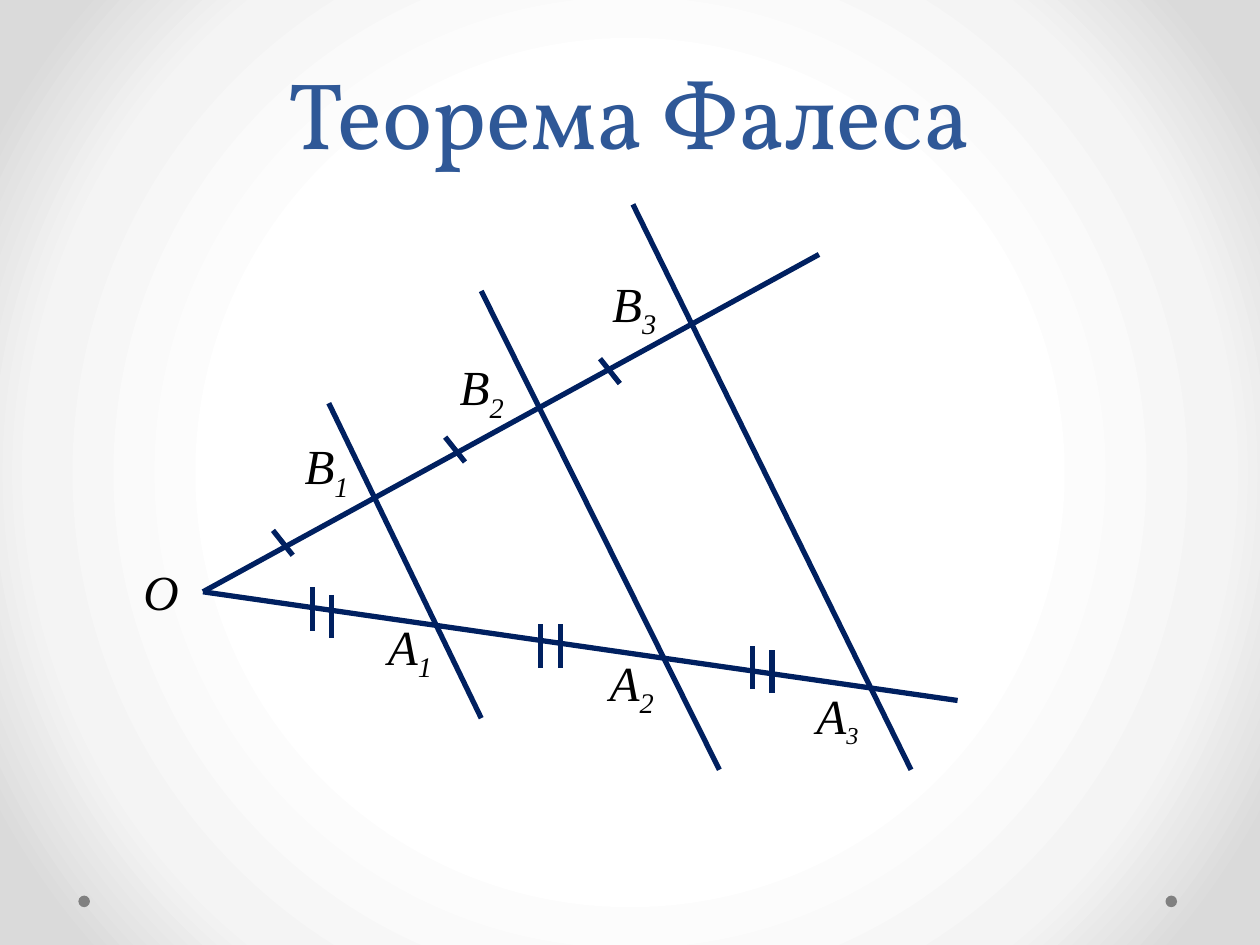
import dataclasses

import lxml.etree
import pptx
import pptx.dml.color
import pptx.enum.shapes
import pptx.enum.text
import pptx.oxml
import pptx.oxml.ns
import pptx.util

Pt = pptx.util.Pt
RGB = pptx.dml.color.RGBColor.from_string
ALIGN = pptx.enum.text.PP_ALIGN
ANCHOR = pptx.enum.text.MSO_ANCHOR
AUTO_SIZE = pptx.enum.text.MSO_AUTO_SIZE
SHAPE = pptx.enum.shapes.MSO_SHAPE
CONNECTOR = pptx.enum.shapes.MSO_CONNECTOR
qn = pptx.oxml.ns.qn


@dataclasses.dataclass(frozen=True)
class Theme:
    title_color: str = "2F5897"
    line_color: str = "002060"
    label_color: str = "000000"
    dot_color: str = "808080"
    background: tuple = ((50, "FFFFFF"), (76, "F4F4F4"), (92, "DADADA"))
    title_font: str = "Vollkorn"
    label_font: str = "Times New Roman"
    title_size: float = 54
    title_spacing: float = 58
    label_size: float = 28
    small_index_size: float = 24
    line_width: float = 3


def add_run(p, text, *, font, size, color, italic=False, subscript=False):
    r = p.add_run()
    r.text = text
    r.font.name = font
    r.font.size = Pt(size)
    r.font.italic = italic
    r.font.color.rgb = RGB(color)
    if subscript:
        r._r.get_or_add_rPr().set("baseline", "-25000")
    return r


class Diagram:
    def __init__(self, s, theme):
        self.s = s
        self.theme = theme

    def background(self):
        """Fill the slide with a circular gradient that starts at its centre."""
        fill = self.s.background.fill
        fill.solid()
        bg_pr = self.s._element.find(".//" + qn("p:bgPr"))
        stops = "".join(
            f'<a:gs pos="{pos * 1000}"><a:srgbClr val="{color}"/></a:gs>'
            for pos, color in self.theme.background
        )
        gradient = pptx.oxml.parse_xml(
            f'<a:gradFill {pptx.oxml.ns.nsdecls("a")} rotWithShape="1">'
            f"<a:gsLst>{stops}</a:gsLst>"
            '<a:path path="circle">'
            '<a:fillToRect l="50000" t="50000" r="50000" b="50000"/>'
            "</a:path></a:gradFill>"
        )
        bg_pr.replace(bg_pr.find(qn("a:solidFill")), gradient)

    def title(self, text, x, y, w, h):
        t = self.theme
        tf = self.s.shapes.add_textbox(Pt(x), Pt(y), Pt(w), Pt(h)).text_frame
        tf.word_wrap = True
        tf.vertical_anchor = ANCHOR.BOTTOM
        p = tf.paragraphs[0]
        p.alignment = ALIGN.CENTER
        p.line_spacing = Pt(t.title_spacing)
        add_run(p, text, font=t.title_font, size=t.title_size, color=t.title_color)

    def label(self, letter, index, x, y, w=41, index_size=None):
        t = self.theme
        tf = self.s.shapes.add_textbox(Pt(x), Pt(y), Pt(w), Pt(41)).text_frame
        tf.word_wrap = False
        tf.auto_size = AUTO_SIZE.SHAPE_TO_FIT_TEXT
        p = tf.paragraphs[0]
        style = dict(font=t.label_font, color=t.label_color, italic=True)
        add_run(p, letter, size=t.label_size, **style)
        if index:
            add_run(p, index, size=index_size or t.label_size, subscript=True, **style)

    def line(self, start, end):
        c = self.s.shapes.add_connector(
            CONNECTOR.STRAIGHT, *(Pt(v) for v in (*start, *end))
        )
        c.line.color.rgb = RGB(self.theme.line_color)
        c.line.width = Pt(self.theme.line_width)
        lxml.etree.SubElement(c._element.spPr, qn("a:effectLst"))

    def tick(self, x, y, dx, dy):
        self.line((x, y), (x + dx, y + dy))

    def dot(self, x, y, d):
        sp = self.s.shapes.add_shape(SHAPE.OVAL, Pt(x), Pt(y), Pt(d), Pt(d))
        sp.shadow.inherit = False
        sp.fill.solid()
        sp.fill.fore_color.rgb = RGB(self.theme.dot_color)
        sp.line.fill.background()


def main():
    prs = pptx.Presentation()
    prs.slide_width, prs.slide_height = Pt(720), Pt(540)
    theme = Theme()
    d = Diagram(prs.slides.add_slide(prs.slide_layouts[6]), theme)

    d.background()
    for x in (666, 44.8):
        d.dot(x, 511.8, 6.6)
    d.title("Теорема Фалеса", 36, 0, 648, 100)

    vertex = (116, 338.2)
    for ray_end in ((468, 145.4), (547.2, 400.3)):
        d.line(ray_end, vertex)

    parallels = (
        ((187.9, 230.4), (275, 410.4)),
        ((275, 166.3), (411.1, 439.9)),
        ((361.7, 116.8), (520.6, 439.9)),
    )
    for start, end in parallels:
        d.line(start, end)

    d.label("B", "3", 342.7, 152.6)
    d.label("B", "2", 255.6, 200.4)
    d.label("B", "1", 167, 245.5)
    d.label("А", "1", 214.6, 348.5)
    d.label("А", "2", 341.3, 369.4)
    d.label("А", "3", 459.4, 388.1, w=39.6, index_size=theme.small_index_size)
    d.label("О", "", 74.9, 317.5, w=35.3)

    for x, y in ((156, 303.1), (254.4, 249.8), (342.9, 205)):
        d.tick(x, y, 11.3, 14.2)

    double_ticks = (
        ((178.6, 335.7), (189.5, 340)),
        ((320.2, 356.8), (308.9, 356.8)),
        ((429.9, 369.2), (441.2, 371.5)),
    )
    for pair in double_ticks:
        for x, y in pair:
            d.tick(x, y, 0, 24.8)

    prs.save("out.pptx")


if __name__ == "__main__":
    main()
